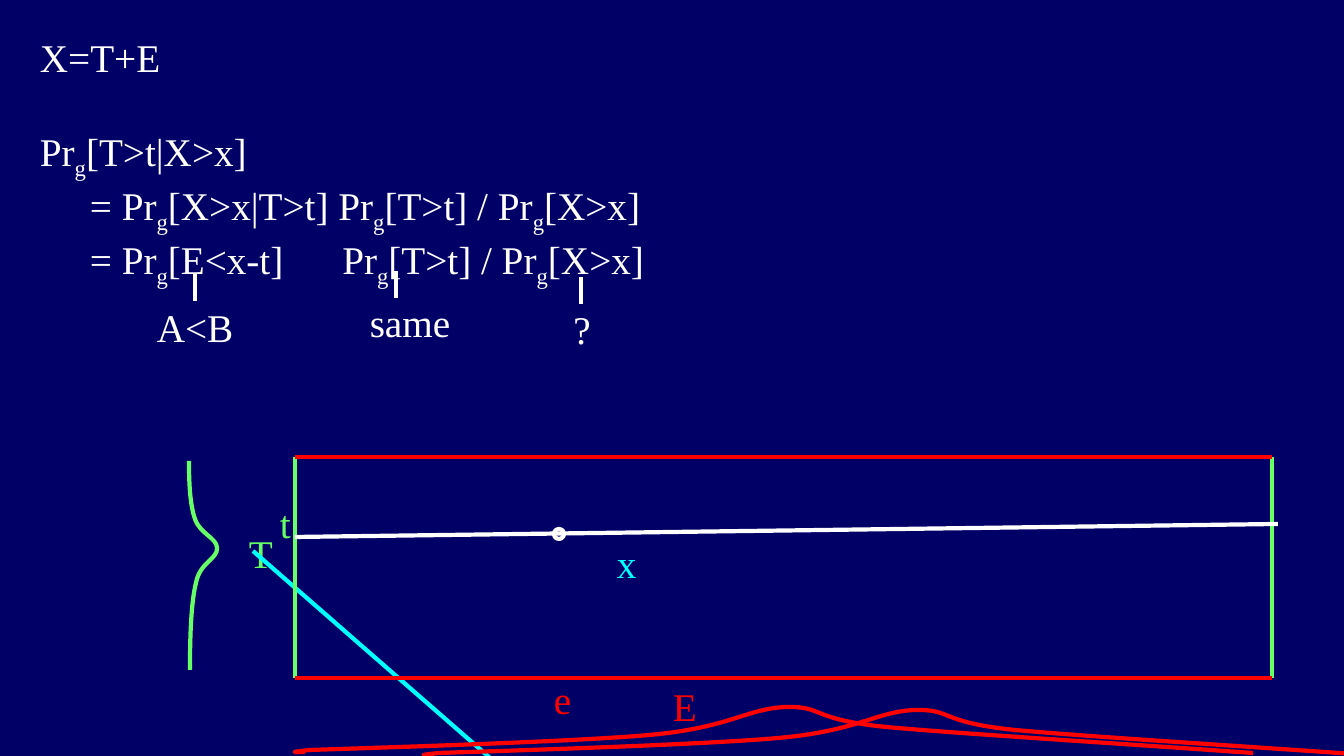
from lxml.etree import SubElement
from pptx import Presentation
from pptx.dml.color import RGBColor
from pptx.enum.shapes import MSO_CONNECTOR as CONNECTOR, MSO_SHAPE as SHAPE
from pptx.enum.text import MSO_AUTO_SIZE as AUTO_SIZE, PP_ALIGN as ALIGN
from pptx.oxml.ns import qn
from pptx.util import Emu, Pt

NAVY = RGBColor(0x00, 0x00, 0x66)
WHITE = RGBColor(0xFF, 0xFF, 0xFF)
GREEN = RGBColor(0x66, 0xFF, 0x66)
RED = RGBColor(0xFF, 0x00, 0x00)
CYAN = RGBColor(0x00, 0xFF, 0xFF)

EMU_PER_PX = 914400 / 100.8

# Curves: a start point, then cubic segments (two controls and an end)
BELL_BOUNDS = (295, 707, 1253, 753)
BELL = [(305, 752),
        (279, 753), (310, 750), (310, 750),
        (368, 748), (571, 742), (649, 735),
        (729, 728), (746, 709), (785, 707),
        (825, 706), (808, 719), (886, 727),
        (964, 734), (1098, 742), (1253, 753)]
BRACE_BOUNDS = (189, 461, 217, 670)
BRACE = [(189, 461),
         (189, 483), (190, 505), (195, 519),
         (200, 534), (217, 538), (217, 548),
         (218, 559), (200, 562), (196, 583),
         (191, 603), (190, 637), (190, 670)]


def px(length):
    return Emu(round(length * EMU_PER_PX))


def style_text(para, color):
    para.font.name = "Times New Roman"
    para.font.size = Pt(28)
    para.font.color.rgb = color


def add_text_box(page, left, top, width, height):
    box = page.shapes.add_textbox(px(left), px(top), px(width), px(height))
    box.text_frame.word_wrap = True
    box.text_frame.auto_size = AUTO_SIZE.SHAPE_TO_FIT_TEXT
    return box.text_frame


def add_label(page, text, left, top, width, color, align=ALIGN.LEFT):
    para = add_text_box(page, left, top, width, 57).paragraphs[0]
    para.text = text
    para.alignment = align
    style_text(para, color)


def add_formula(para, text, gap=None):
    """Write text; each "_" lowers the next letter, each "~" is a wide gap."""
    style_text(para, WHITE)
    for index, part in enumerate(text.split("_")):
        if index:
            span = para.add_run()
            span.text = part[0]
            span.font._element.set("baseline", "-25000")
            part = part[1:]
        before, wide, after = part.partition("~")
        para.add_run().text = before
        if wide:
            span = para.add_run()
            span.text = " "
            span.font._element.set("spc", str(gap))
            para.add_run().text = after


def add_line(page, start, end, color):
    line = page.shapes.add_connector(
        CONNECTOR.STRAIGHT, *(px(value) for value in (*start, *end)))
    line.line.color.rgb = color
    line.line.width = Pt(3)
    SubElement(line._element.spPr, qn("a:effectLst"))


def outline(shape, color):
    shape.shadow.inherit = False
    shape.fill.background()
    shape.line.color.rgb = color
    shape.line.width = Pt(3)


def add_curve(page, bounds, points, color, shift=(0, 0)):
    left, top, right, bottom = bounds
    # A diagonal sets the extent; its path then takes the cubic segments
    builder = page.shapes.build_freeform(
        left + shift[0], top + shift[1], scale=EMU_PER_PX)
    builder.add_line_segments([(right + shift[0], bottom + shift[1])],
                              close=False)
    shape = builder.convert_to_shape()
    outline(shape, color)

    track = next(shape._element.iter(qn("a:path")))
    for child in list(track):
        track.remove(child)
    for index, (x, y) in enumerate(points):
        if index == 0:
            segment = SubElement(track, qn("a:moveTo"))
        elif index % 3 == 1:
            segment = SubElement(track, qn("a:cubicBezTo"))
        SubElement(segment, qn("a:pt"), x=str(x - left), y=str(y - top))


def add_derivation(page):
    frame = add_text_box(page, 30, 28, 1094, 295)
    add_formula(frame.paragraphs[0], "X=T+E")
    para = frame.add_paragraph()
    para.space_before = Pt(34)
    add_formula(para, "Pr_g[T>t|X>x]")
    for text, space in (("= Pr_g[X>x|T>t] Pr_g[T>t] / Pr_g[X>x]", 0),
                        ("= Pr_g[E<x-t]~Pr_g[T>t] / Pr_g[X>x]", 0.7)):
        para = frame.add_paragraph()
        para.level = 1
        para.space_before = Pt(space)
        para._p.get_or_add_pPr().set("marL", str(px(50)))
        para._p.get_or_add_pPr().set("indent", "0")
        add_formula(para, text, gap=3500)


def main():
    deck = Presentation()
    deck.slide_width, deck.slide_height = px(1344), px(756)
    page = deck.slides.add_slide(deck.slide_layouts[6])
    page.background.fill.solid()
    page.background.fill.fore_color.rgb = NAVY

    # Derivation, with a tick and a remark under each factor
    add_derivation(page)
    for text, left, top, tick, tick_top in (("A<B", 143, 298, 195, 274),
                                            ("same", 358, 293, 396, 271),
                                            ("?", 530, 300, 581, 277)):
        add_label(page, text, left, top, 104, WHITE, ALIGN.CENTER)
        add_line(page, (tick, tick_top), (tick, tick_top + 27), WHITE)

    # Letters around the frame
    for text, left, top, color in (("T", 239, 524, GREEN),
                                   ("E", 663, 677, RED),
                                   ("x", 607, 534, CYAN),
                                   ("t", 270, 494, GREEN),
                                   ("e", 544, 670, RED)):
        add_label(page, text, left, top, 62, color)

    # Frame: green sides, red top and bottom
    add_line(page, (253, 551), (505, 771), CYAN)
    left, top, right, bottom = 295, 457, 1272, 678
    for x in (left, right):
        add_line(page, (x, top), (x, bottom), GREEN)
    for y in (top, bottom):
        add_line(page, (left, y), (right, y), RED)

    # Distributions of E below and of T at the left
    add_curve(page, BELL_BOUNDS, BELL, RED)
    add_curve(page, BELL_BOUNDS, BELL, RED, shift=(129, 3))
    add_curve(page, BRACE_BOUNDS, BRACE, GREEN)

    # Point on the sloping line
    point = page.shapes.add_shape(SHAPE.OVAL, px(554), px(529), px(10), px(10))
    outline(point, WHITE)
    add_line(page, (295, 537), (1278, 524), WHITE)

    deck.save("out.pptx")


if __name__ == "__main__":
    main()
